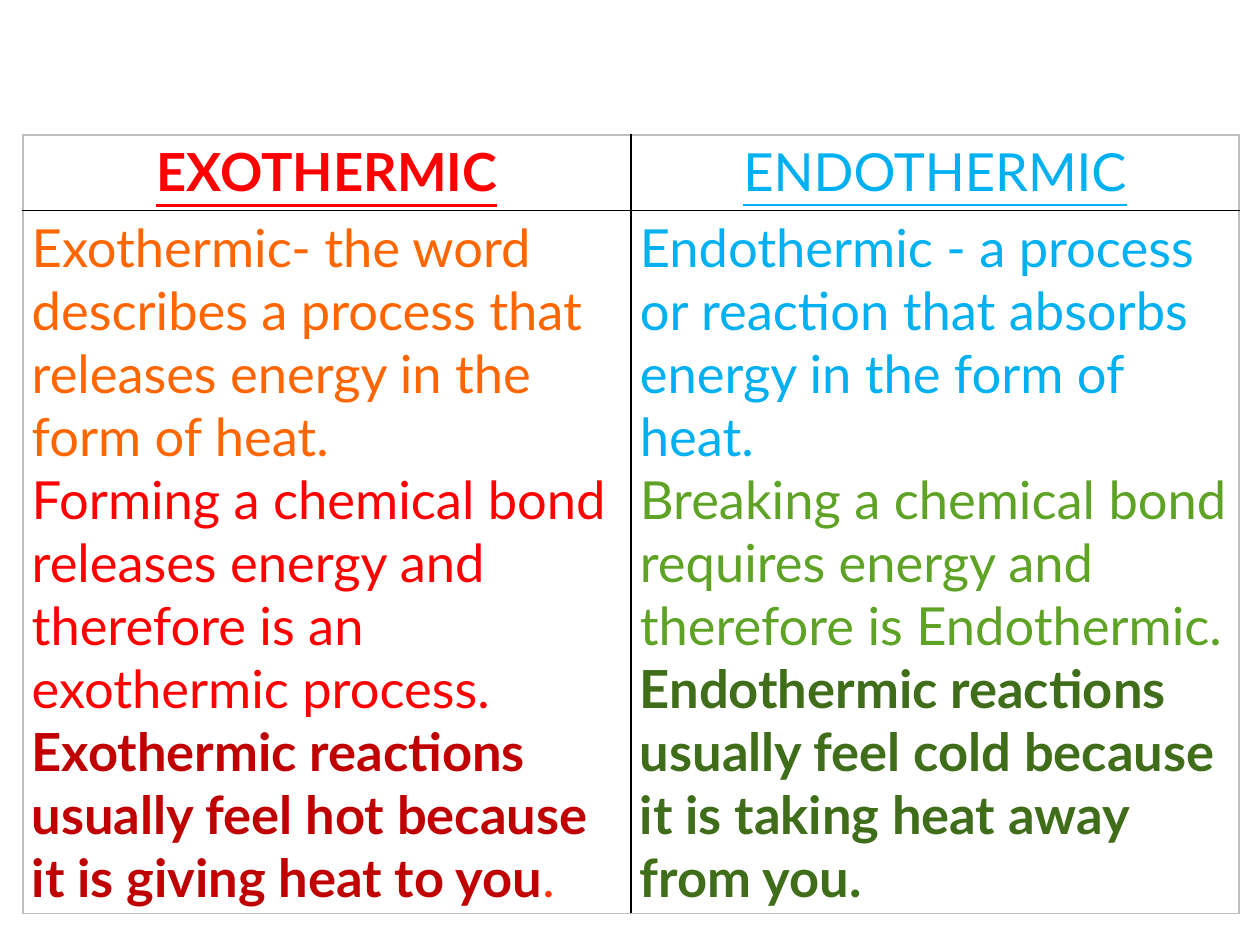
"""Build a slide comparing exothermic and endothermic reactions in a table."""
from lxml.etree import SubElement
from pptx import Presentation
from pptx.dml.color import RGBColor
from pptx.enum.text import PP_ALIGN
from pptx.oxml.ns import qn
from pptx.util import Cm, Pt

COLORS = {
    "red": "FF0000", "orange": "FF6600", "dark red": "C00000", "vermilion": "FF3300",
    "blue": "00B0F0", "green": "5FA326", "dark green": "3F6D19",
    "divider": "000000", "frame": "BFBFBF",
}
HEADINGS = [("EXOTHERMIC", "red", True), ("ENDOTHERMIC", "blue", False)]
EXPLANATIONS = [
    [
        [("Exothermic- the word describes a process that releases energy in the form of heat.",
          "orange", False)],
        [("Forming a chemical bond releases energy and therefore is an exothermic process.",
          "red", False)],
        [("Exothermic reactions usually feel hot because it is giving heat to you",
          "dark red", True), (".", "vermilion", False)],
    ],
    [
        [("Endothermic - a process or reaction that absorbs energy in the form of heat.",
          "blue", False)],
        [("Breaking a chemical bond requires energy and therefore is Endothermic.",
          "green", False)],
        [("Endothermic reactions usually feel cold because it is taking heat away from you.",
          "dark green", True)],
    ],
]
ROWS = [[[[heading]] for heading in HEADINGS], EXPLANATIONS]
ROW_HEIGHTS = [1.52, 12.14]
COLUMN_WIDTH = 12.26
LEFT, TOP = 0.46, 2.72


def add_border(cell, side, color):
    border = SubElement(cell._tc.get_or_add_tcPr(), qn(f"a:{side}"), w=str(Pt(1)))
    fill = SubElement(border, qn("a:solidFill"))
    SubElement(fill, qn("a:srgbClr"), val=COLORS[color])


def fill_cell(cell, paragraphs, is_heading):
    cell.margin_left = cell.margin_right = Cm(0.18)
    cell.margin_top = cell.margin_bottom = Cm(0.1)
    for index, parts in enumerate(paragraphs):
        frame = cell.text_frame
        paragraph = frame.add_paragraph() if index else frame.paragraphs[0]
        paragraph.alignment = PP_ALIGN.CENTER if is_heading else PP_ALIGN.LEFT
        for wording, color, bold in parts:
            run = paragraph.add_run()
            run.text = wording
            run.font.name = "Lato"
            run.font.size = Pt(30)
            run.font.bold = bold
            run.font.underline = is_heading
            run.font.color.rgb = RGBColor.from_string(COLORS[color])


def main():
    presentation = Presentation()
    presentation.slide_width, presentation.slide_height = Cm(25.4), Cm(19.05)
    slide = presentation.slides.add_slide(presentation.slide_layouts[6])
    comparison = slide.shapes.add_table(
        len(ROWS), len(HEADINGS), Cm(LEFT), Cm(TOP),
        Cm(COLUMN_WIDTH * len(HEADINGS)), Cm(sum(ROW_HEIGHTS))).table
    comparison.first_row = comparison.horz_banding = False
    for column in comparison.columns:
        column.width = Cm(COLUMN_WIDTH)
    for r, (height, contents) in enumerate(zip(ROW_HEIGHTS, ROWS)):
        comparison.rows[r].height = Cm(height)
        for c, paragraphs in enumerate(contents):
            cell = comparison.cell(r, c)
            outer = {"lnL": c == 0, "lnR": c == len(contents) - 1,
                     "lnT": r == 0, "lnB": r == len(ROWS) - 1}
            for side, on_edge in outer.items():
                add_border(cell, side, "frame" if on_edge else "divider")
            cell.fill.background()
            fill_cell(cell, paragraphs, r == 0)
    presentation.save("out.pptx")


if __name__ == "__main__":
    main()
